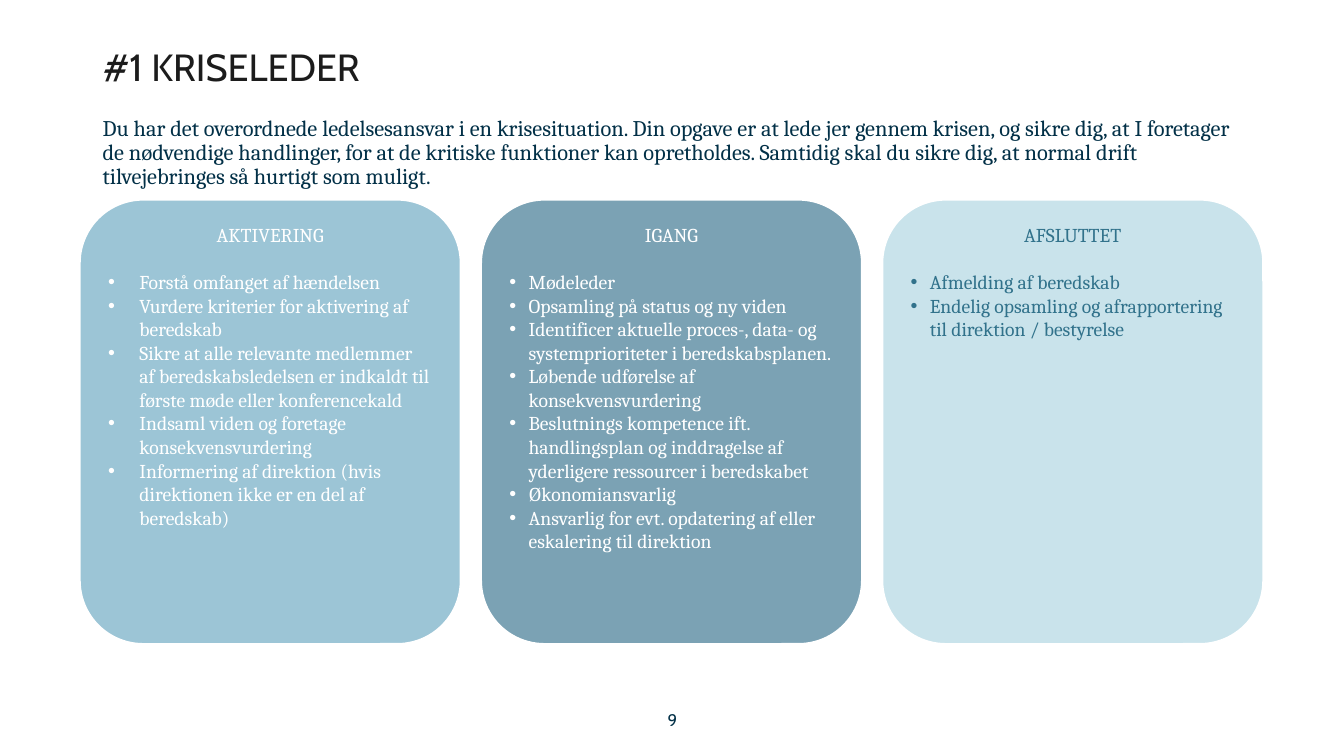
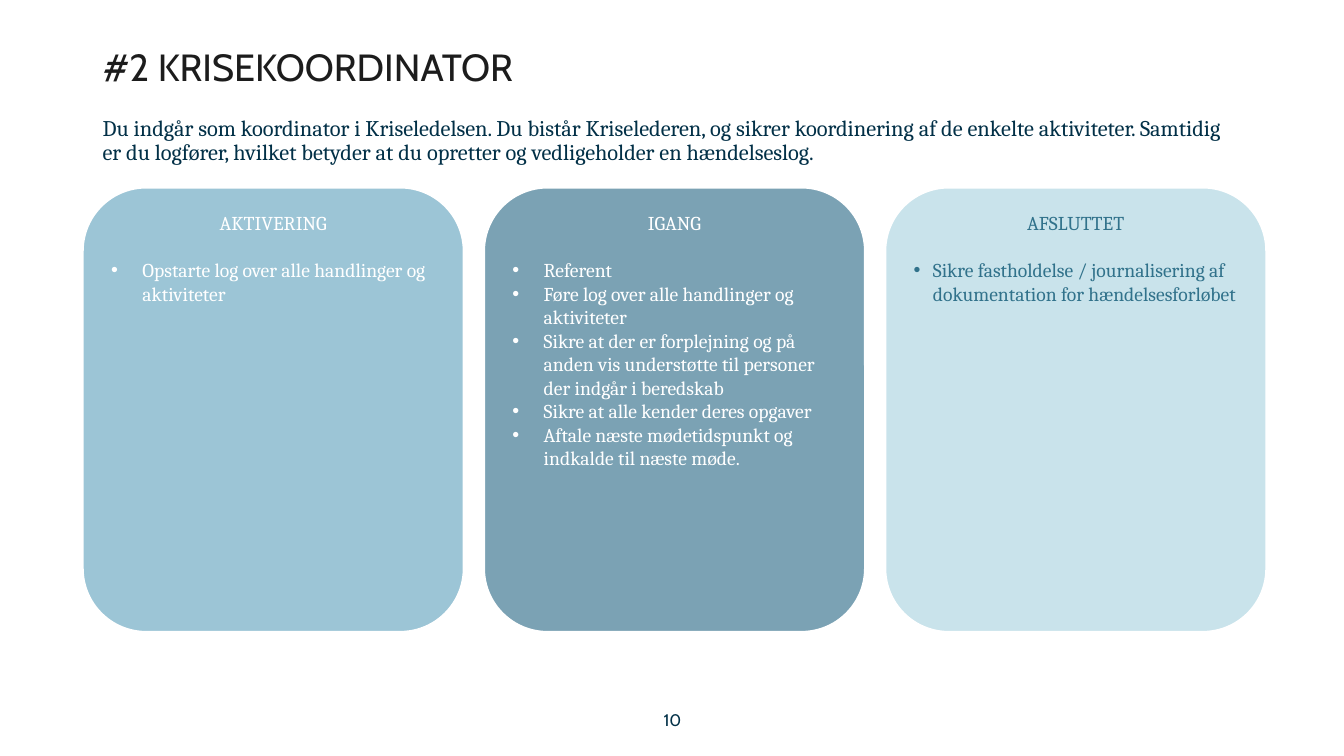
from collections import namedtuple

from lxml import etree
from pptx import Presentation
from pptx import util as u
from pptx.dml.color import RGBColor
from pptx.enum import shapes, text
from pptx.oxml.ns import qn

WHITE = RGBColor(0xFF, 0xFF, 0xFF)
INK = RGBColor(0x1C, 0x1C, 0x1C)
NAVY = RGBColor(0x02, 0x30, 0x47)
TEAL = RGBColor(0x31, 0x72, 0x8B)
SKY = RGBColor(0x9C, 0xC5, 0xD6)
STEEL = RGBColor(0x7B, 0xA2, 0xB4)
ICE = RGBColor(0xC9, 0xE3, 0xEB)

HEAD_FONT, BODY_FONT = "Cabin", "Cambria"
WIDE, NARROW = 0.31, 0.19  # bullet indents in inches

Box = namedtuple("Box", "left top width height")
SLIDE = Box(0, 0, 13.33, 7.5)
TITLE = Box(0.92, 0.15, 11.5, 0.79)
INTRO = Box(0.92, 1.11, 11.5, 0.97)
NUMBER = Box(5.17, 6.94, 3, 0.4)
CARD_GAP = 0.2

PHASES = [
    ("AKTIVERING", SKY, WHITE),
    ("IGANG", STEEL, WHITE),
    ("AFSLUTTET", ICE, TEAL),
]

ROLES = [
    {
        "number": "9",
        "title": "#1 KRISELEDER",
        "intro": "Du har det overordnede ledelsesansvar i en krisesituation. Din opgave er "
                 "at lede jer gennem krisen, og sikre dig, at I foretager de nødvendige "
                 "handlinger, for at de kritiske funktioner kan opretholdes. Samtidig skal "
                 "du sikre dig, at normal drift tilvejebringes så hurtigt som muligt.",
        "cards": Box(0.79, 1.98, 11.74, 4.41),
        "indents": (WIDE, NARROW, NARROW),
        "tasks": [
            [
                "Forstå omfanget af hændelsen",
                "Vurdere kriterier for aktivering af beredskab",
                "Sikre at alle relevante medlemmer af beredskabsledelsen er indkaldt til "
                "første møde eller konferencekald",
                "Indsaml viden og foretage konsekvensvurdering",
                "Informering af direktion (hvis direktionen ikke er en del af beredskab)",
            ],
            [
                "Mødeleder",
                "Opsamling på status og ny viden",
                "Identificer aktuelle proces-, data- og systemprioriteter i "
                "beredskabsplanen.",
                "Løbende udførelse af konsekvensvurdering",
                "Beslutnings kompetence ift. handlingsplan og inddragelse af yderligere "
                "ressourcer i beredskabet",
                "Økonomiansvarlig",
                "Ansvarlig for evt. opdatering af eller eskalering til direktion",
            ],
            [
                "Afmelding af beredskab",
                "Endelig opsamling og afrapportering til direktion / bestyrelse",
            ],
        ],
    },
    {
        "number": "10",
        "title": "#2 KRISEKOORDINATOR",
        "intro": "Du indgår som koordinator i Kriseledelsen. Du bistår Kriselederen, og "
                 "sikrer koordinering af de enkelte aktiviteter. Samtidig er du logfører, "
                 "hvilket betyder at du opretter og vedligeholder en hændelseslog.",
        "cards": Box(0.82, 1.86, 11.74, 4.41),
        "indents": (WIDE, WIDE, NARROW),
        "tasks": [
            ["Opstarte log over alle handlinger og aktiviteter"],
            [
                "Referent",
                "Føre log over alle handlinger og aktiviteter",
                "Sikre at der er forplejning og på anden vis understøtte til personer der "
                "indgår i beredskab",
                "Sikre at alle kender deres opgaver",
                "Aftale næste mødetidspunkt og indkalde til næste møde.",
            ],
            ["Sikre fastholdelse / journalisering af dokumentation for hændelsesforløbet"],
        ],
    },
]


def inches(box):
    return [u.Inches(length) for length in box]


def write(para, words, size, font, color, align=text.PP_ALIGN.LEFT):
    para.text = words
    para.alignment = align
    for span in para.runs:
        span.font.size = u.Pt(size)
        span.font.name = font
        span.font.color.rgb = color


def add_bullet(para, indent):
    props = para._p.get_or_add_pPr()
    props.set("marL", str(u.Inches(indent)))
    props.set("indent", str(-u.Inches(indent)))
    etree.SubElement(props, qn("a:buFont"), typeface="Arial")
    etree.SubElement(props, qn("a:buChar"), char="•")


def place_title(page, words, box):
    title = page.shapes.title
    title.left, title.top, title.width, title.height = inches(box)
    frame = title.text_frame
    frame.auto_size = text.MSO_AUTO_SIZE.NONE
    frame.vertical_anchor = text.MSO_ANCHOR.BOTTOM
    write(frame.paragraphs[0], words, 27, HEAD_FONT, INK)
    frame.paragraphs[0].line_spacing = 0.9


def add_label(page, words, box, size, font, align=text.PP_ALIGN.LEFT):
    frame = page.shapes.add_textbox(*inches(box)).text_frame
    frame.word_wrap = True
    write(frame.paragraphs[0], words, size, font, NAVY, align)
    return frame


def add_card(page, box, phase, tasks, indent):
    """Rounded card with a centred phase name above its bulleted tasks."""
    heading, fill, color = phase
    card = page.shapes.add_shape(shapes.MSO_SHAPE.ROUNDED_RECTANGLE, *inches(box))
    card.shadow.inherit = False
    card.fill.solid()
    card.fill.fore_color.rgb = fill
    card.line.color.rgb = WHITE
    card.line.width = u.Pt(1.5)
    frame = card.text_frame
    frame.word_wrap = True
    frame.vertical_anchor = text.MSO_ANCHOR.TOP
    para = frame.paragraphs[0]
    write(para, heading, 14, BODY_FONT, color, text.PP_ALIGN.CENTER)
    para.space_after = u.Pt(16.8)
    for task in tasks:
        para = frame.add_paragraph()
        add_bullet(para, indent)
        write(para, task, 14, BODY_FONT, color)


def add_cards(page, box, tasks, indents):
    """Split the box into one equal column for each phase."""
    width = (box.width - CARD_GAP * (len(PHASES) - 1)) / len(PHASES)
    for column, (phase, items, indent) in enumerate(zip(PHASES, tasks, indents)):
        left = box.left + column * (width + CARD_GAP)
        add_card(page, Box(left, box.top, width, box.height), phase, items, indent)


def add_role_slide(deck, role):
    page = deck.slides.add_slide(deck.slide_layouts.get_by_name("Title Only"))
    place_title(page, role["title"], TITLE)
    add_cards(page, role["cards"], role["tasks"], role["indents"])
    intro = add_label(page, role["intro"], INTRO, 16, BODY_FONT)
    intro.paragraphs[0].line_spacing = 0.9
    number = add_label(page, role["number"], NUMBER, 12, HEAD_FONT, text.PP_ALIGN.CENTER)
    number.vertical_anchor = text.MSO_ANCHOR.MIDDLE


def main():
    deck = Presentation()
    deck.slide_width = u.Inches(SLIDE.width)
    deck.slide_height = u.Inches(SLIDE.height)
    for role in ROLES:
        add_role_slide(deck, role)
    deck.save("out.pptx")


if __name__ == "__main__":
    main()
